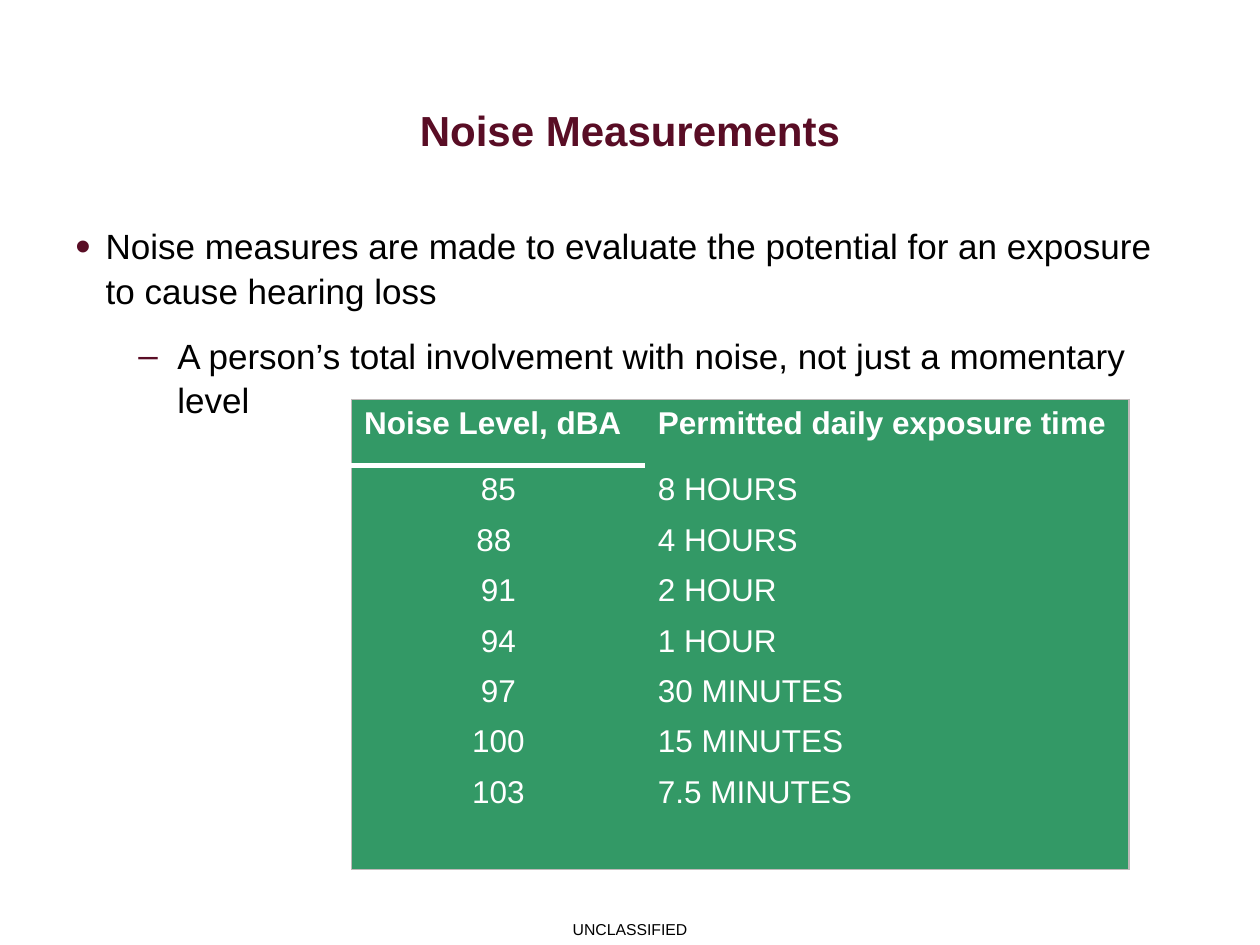
from lxml.etree import SubElement
from pptx import Presentation
from pptx.dml.color import RGBColor
from pptx.enum.text import MSO_ANCHOR as Anchor, PP_ALIGN as Align
from pptx.oxml.ns import qn
from pptx.util import Pt

MAROON = RGBColor(0x59, 0x0D, 0x25)
GREEN = RGBColor(0x33, 0x99, 0x66)
GREY = RGBColor(0xBF, 0xB9, 0xB9)
WHITE = RGBColor(0xFF, 0xFF, 0xFF)
BLACK = RGBColor(0, 0, 0)

POINTS = [
    # text, bullet, bullet size %, left margin, hanging indent
    ("Noise measures are made to evaluate the potential for an exposure "
     "to cause hearing loss", "•", 125, 17.3, 17.3),
    ("A person’s total involvement with noise, not just a momentary level",
     "–", 100, 58.3, 22.3),
]
ROWS = [
    ("Noise Level, dBA", "Permitted daily exposure time"),
    ("85", "8 HOURS"),
    ("88 ", "4 HOURS"),
    ("91", "2 HOUR"),
    ("94", "1 HOUR"),
    ("97", "30 MINUTES"),
    ("100", "15 MINUTES"),
    ("103", "7.5 MINUTES"),
    ("", ""),
]


def style(para, size, color, bold=False):
    for run in para.runs:
        font = run.font
        font.name, font.size, font.bold = "Arial", Pt(size), bold
        font.color.rgb = color


def add_box(slide, left, top, width, height):
    box = slide.shapes.add_textbox(Pt(left), Pt(top), Pt(width), Pt(height))
    box.text_frame.word_wrap = True
    return box.text_frame


def add_line(slide, box, text, size, color, bold=False):
    """Place one centred line of text in the box."""
    frame = add_box(slide, *box)
    frame.vertical_anchor = Anchor.MIDDLE
    frame.text = text
    para = frame.paragraphs[0]
    para.alignment = Align.CENTER
    style(para, size, color, bold)


def add_bullet(para, mark, scale, margin, hang):
    props = para._p.get_or_add_pPr()
    props.set("marL", str(Pt(margin)))
    props.set("indent", str(-Pt(hang)))
    tint = SubElement(props, qn("a:buClr"))
    SubElement(tint, qn("a:srgbClr"), val=str(MAROON))
    SubElement(props, qn("a:buSzPct"), val=str(scale * 1000))
    SubElement(props, qn("a:buFont"), typeface="Arial")
    SubElement(props, qn("a:buChar"), char=mark)


def add_points(slide, box):
    frame = add_box(slide, *box)
    for i, (text, *bullet) in enumerate(POINTS):
        para = frame.add_paragraph() if i else frame.paragraphs[0]
        para.text = text
        para.level = i
        add_bullet(para, *bullet)
        para.line_spacing = 1.05
        if i:
            para.space_before = Pt(12)
        style(para, 20, BLACK)


def set_edges(cell, edges):
    """Draw the given edges, side: (colour, width), and hide the others."""
    props = cell._tc.get_or_add_tcPr()
    for i, side in enumerate("LRTB"):
        color, width = edges.get(side, (None, 0))
        line = props.makeelement(qn(f"a:ln{side}"), {"w": str(Pt(width))})
        props.insert(i, line)
        if color is None:
            SubElement(line, qn("a:noFill"))
        else:
            fill = SubElement(line, qn("a:solidFill"))
            SubElement(fill, qn("a:srgbClr"), val=str(color))


def add_limits(slide, left, top, widths, head, step):
    """Add the exposure table with a taller head row."""
    last = len(ROWS) - 1
    frame = slide.shapes.add_table(
        len(ROWS), 2, Pt(left), Pt(top), Pt(sum(widths)),
        Pt(head + last * step))
    table = frame.table
    table.horz_banding = False
    for col, width in zip(table.columns, widths):
        col.width = Pt(width)
    for r, row in enumerate(ROWS):
        table.rows[r].height = Pt(step if r else head)
        for c, text in enumerate(row):
            cell = table.cell(r, c)
            cell.fill.solid()
            cell.fill.fore_color.rgb = GREEN
            cell.text = text
            para = cell.text_frame.paragraphs[0]
            if r and c == 0:
                para.alignment = Align.CENTER
            style(para, 18, WHITE, bold=r == 0)
            edges = {"R" if c else "L": (GREY, 0.75)}
            if r == 0:
                edges["T"] = (GREY, 0.75)
            if r == last:
                edges["B"] = (GREY, 0.75)
            if c == 0 and r < 2:
                edges["T" if r else "B"] = (WHITE, 3)
            set_edges(cell, edges)


def main():
    deck = Presentation()
    deck.slide_width, deck.slide_height = Pt(720), Pt(540)
    slide = deck.slides.add_slide(deck.slide_layouts[6])
    add_line(slide, (314, 522, 92, 18), "UNCLASSIFIED", 9, BLACK)
    add_points(slide, (36, 123.8, 648, 356.4))
    add_line(slide, (36, 56.2, 648, 36), "Noise Measurements", 24, MAROON,
             bold=True)
    add_limits(slide, 200.9, 228.2, (167.8, 276.5), 38, 28.8)
    deck.save("out.pptx")


if __name__ == "__main__":
    main()
